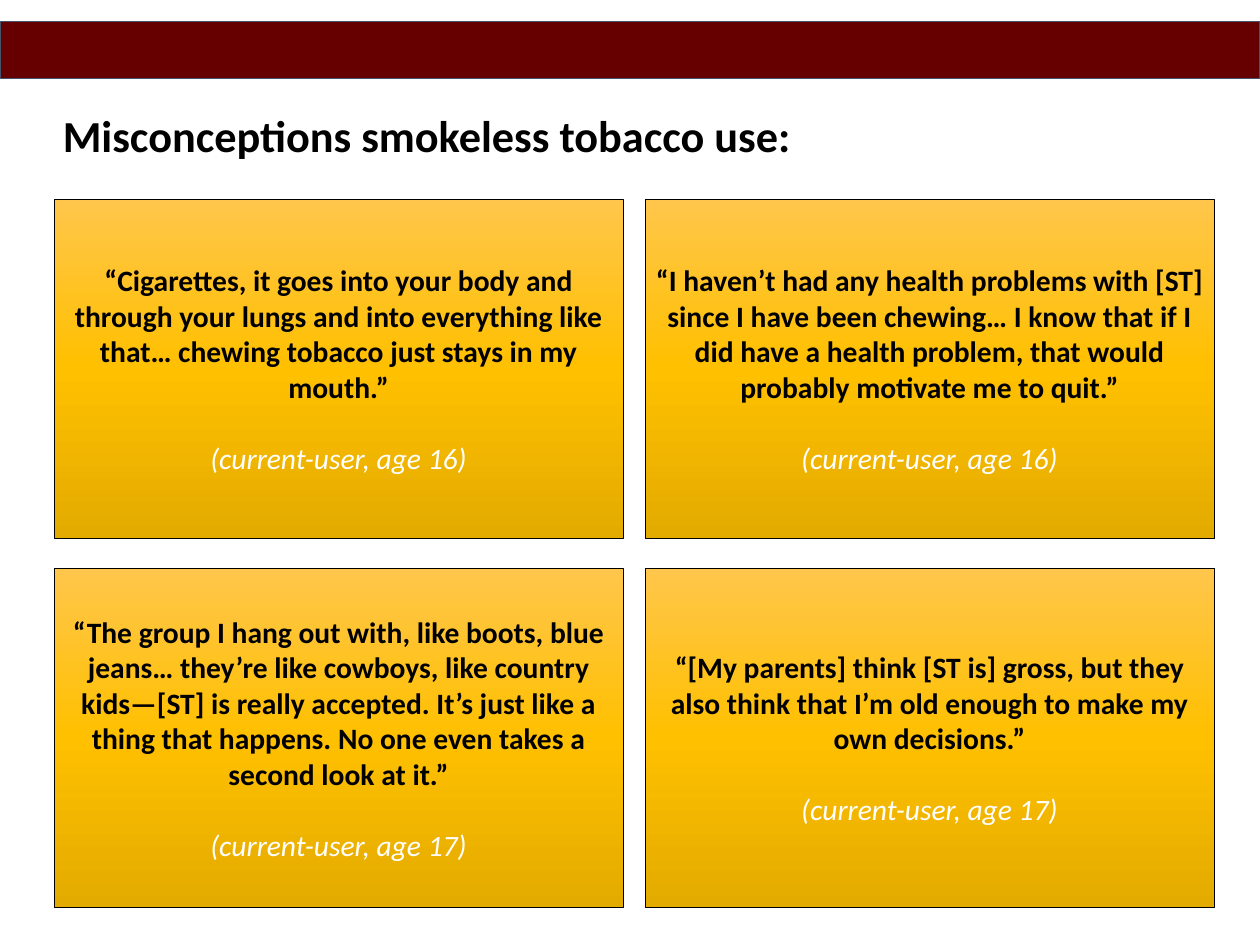
from copy import deepcopy

from pptx import Presentation
from pptx import util as u
from pptx.dml.color import RGBColor
from pptx.enum import shapes, text

FONT = "Calibri"
COLORS = {
    "band": "660000",
    "edge": "44546A",
    "ink": "000000",
    "pale": "FFFFFF",
    "top": "FFC64B",
    "mid": "FFC000",
    "base": "E3AB00",
}
# Rows of cards, each card a quote and its speaker
QUOTES = [
    [
        ("“Cigarettes, it goes into your body and through your lungs and into "
         "everything like that… chewing tobacco just stays in my mouth.”",
         "(current-user, age 16)"),
        ("“I haven’t had any health problems with [ST] since I have been "
         "chewing… I know that if I did have a health problem, that would "
         "probably motivate me to quit.”",
         "(current-user, age 16)"),
    ],
    [
        ("“The group I hang out with, like boots, blue jeans… they’re like "
         "cowboys, like country kids—[ST] is really accepted. It’s just like a "
         "thing that happens. No one even takes a second look at it.”",
         "(current-user, age 17)"),
        ("“[My parents] think [ST is] gross, but they also think that I’m old "
         "enough to make my own decisions.”",
         "(current-user, age 17)"),
    ],
]
LEFT, TOP = 1.55, 5.71
WIDTH, HEIGHT = 16.31, 9.73
STEP_X, STEP_Y = 16.94, 10.59


def color(name):
    return RGBColor.from_string(COLORS[name])


def style(para, words, size, ink, bold=False, italic=False):
    para.text = words
    font = para.font
    font.name, font.size = FONT, u.Pt(size)
    font.bold, font.italic = bold, italic
    font.color.rgb = color(ink)


def add_box(slide, left, top, width, height, edge, weight):
    box = slide.shapes.add_shape(
        shapes.MSO_SHAPE.RECTANGLE,
        u.Cm(left), u.Cm(top), u.Cm(width), u.Cm(height))
    box.shadow.inherit = False
    box.line.color.rgb = color(edge)
    box.line.width = u.Pt(weight)
    return box


def shade(box):
    """Fill the box with three colours running from top to bottom."""
    fill = box.fill
    fill.gradient()
    fill.gradient_angle = 270
    first = box._element.spPr.find(".//{*}gs")
    first.addnext(deepcopy(first))
    for i, name in enumerate(("top", "mid", "base")):
        stop = fill.gradient_stops[i]
        stop.position = i / 2
        stop.color.rgb = color(name)


def add_band(slide):
    band = add_box(slide, 0, 0.61, 36.12, 1.65, "edge", 0.75)
    band.fill.solid()
    band.fill.fore_color.rgb = color("band")


def add_title(slide, words):
    box = slide.shapes.add_textbox(
        u.Cm(LEFT), u.Cm(2.97), u.Cm(21.69), u.Cm(1.8))
    frame = box.text_frame
    frame.word_wrap = False
    frame.auto_size = text.MSO_AUTO_SIZE.SHAPE_TO_FIT_TEXT
    style(frame.paragraphs[0], words, 36, "ink", bold=True)


def add_card(slide, left, top, quote, speaker):
    card = add_box(slide, left, top, WIDTH, HEIGHT, "ink", 0.5)
    shade(card)
    frame = card.text_frame
    frame.word_wrap = True
    frame.vertical_anchor = text.MSO_ANCHOR.MIDDLE
    style(frame.paragraphs[0], quote, 24, "ink", bold=True)
    source = frame.add_paragraph()
    style(source, speaker, 24, "pale", italic=True)
    source.space_before = u.Pt(29)
    for para in frame.paragraphs:
        para.alignment = text.PP_ALIGN.CENTER


def main():
    deck = Presentation()
    deck.slide_width, deck.slide_height = u.Cm(36.12), u.Cm(27.1)
    slide = deck.slides.add_slide(deck.slide_layouts[6])
    add_band(slide)
    add_title(slide, "Misconceptions smokeless tobacco use:")
    for row, cards in enumerate(QUOTES):
        for col, (quote, speaker) in enumerate(cards):
            add_card(slide, LEFT + col * STEP_X, TOP + row * STEP_Y,
                     quote, speaker)
    deck.save("out.pptx")


if __name__ == "__main__":
    main()
